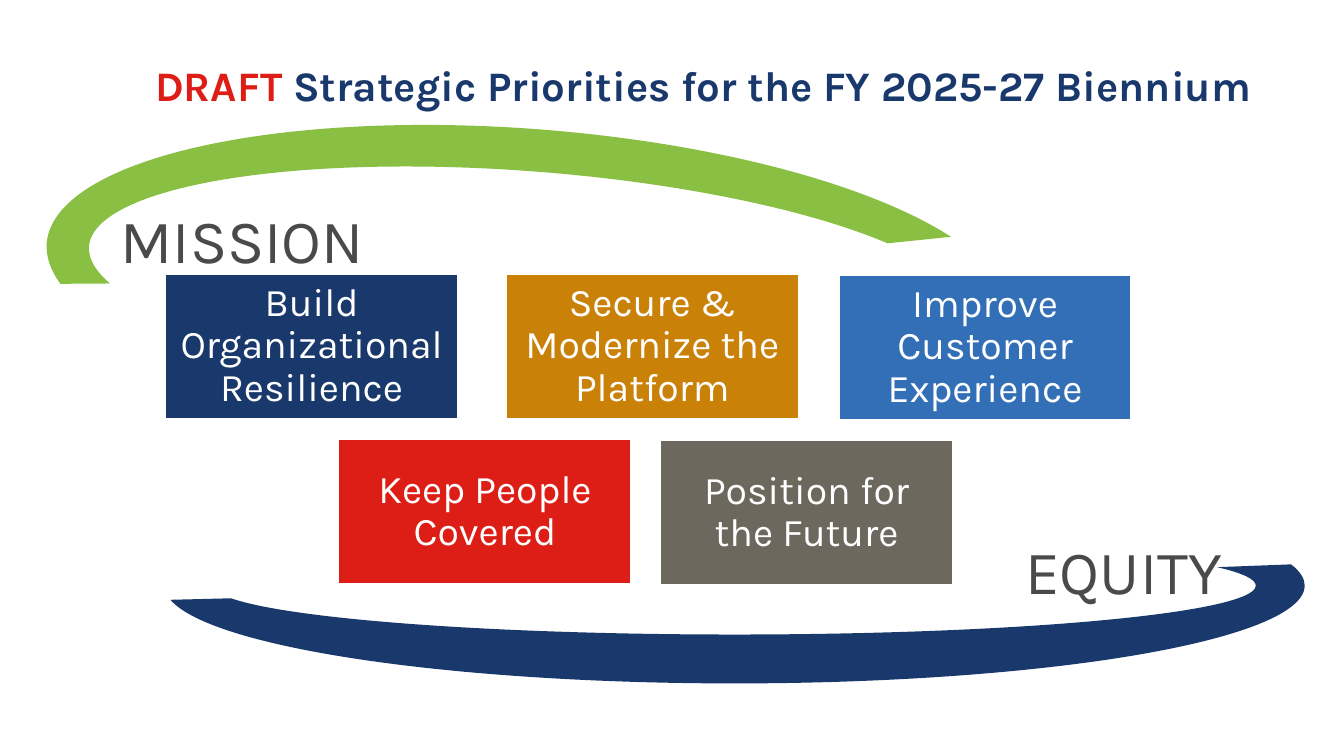
from pptx import Presentation
from pptx.dml.color import RGBColor
from pptx.enum.shapes import MSO_SHAPE
from pptx.enum.text import MSO_ANCHOR, PP_ALIGN
from pptx.util import Inches, Pt

NAVY, RED, GREEN = "19386B", "DD1E16", "89BF42"
GOLD, BLUE, TAUPE = "CA8108", "326FB6", "6D685E"
WHITE, GRAY = "FFFFFF", "4A4A4A"


def color(value):
    return RGBColor.from_string(value)


class SlideBuilder:
    font_name = "Karla"
    card_size = (2.9, 1.43)
    card_inset = Inches(0.12)

    def __init__(self, slide):
        self.slide = slide

    def style_run(self, run, size, font_color, bold=False):
        run.font.name = self.font_name
        run.font.size = Pt(size)
        run.font.bold = bold
        run.font.color.rgb = color(font_color)

    def shape(self, kind, box, fill):
        shape = self.slide.shapes.add_shape(kind, *map(Inches, box))
        shape.shadow.inherit = False
        shape.fill.solid()
        shape.fill.fore_color.rgb = color(fill)
        return shape

    def text_box(self, box):
        text_frame = self.slide.shapes.add_textbox(*map(Inches, box)).text_frame
        text_frame.word_wrap = True
        return text_frame

    def title(self, box, parts):
        text_frame = self.text_box(box)
        text_frame.vertical_anchor = MSO_ANCHOR.MIDDLE
        paragraph = text_frame.paragraphs[0]
        paragraph.line_spacing = 0.9
        for text, font_color in parts:
            run = paragraph.add_run()
            run.text = text
            self.style_run(run, 30, font_color, bold=True)

    def label(self, box, text, alignment):
        text_frame = self.text_box(box)
        text_frame.text = text
        paragraph = text_frame.paragraphs[0]
        paragraph.alignment = alignment
        self.style_run(paragraph.runs[0], 44, GRAY)

    def card(self, left, top, text, fill):
        card = self.shape(MSO_SHAPE.RECTANGLE, (left, top, *self.card_size), fill)
        card.line.color.rgb = color(WHITE)
        card.line.width = Pt(1)
        text_frame = card.text_frame
        text_frame.word_wrap = True
        text_frame.vertical_anchor = MSO_ANCHOR.MIDDLE
        text_frame.margin_left = text_frame.margin_right = self.card_inset
        text_frame.margin_top = text_frame.margin_bottom = self.card_inset
        text_frame.text = text
        paragraph = text_frame.paragraphs[0]
        paragraph.alignment = PP_ALIGN.CENTER
        paragraph.line_spacing = 0.9
        self.style_run(paragraph.runs[0], 28, WHITE)

    def swoosh(self, box, rotation, start, end, thickness, fill):
        """Draw a block arc between two angles given in degrees."""
        arc = self.shape(MSO_SHAPE.BLOCK_ARC, box, fill)
        arc.line.fill.background()
        arc.rotation = rotation
        # Angles are stored in 60000ths of a degree, adjustments in 100000ths
        arc.adjustments[0] = start * 0.6
        arc.adjustments[1] = end * 0.6
        arc.adjustments[2] = thickness


def main():
    presentation = Presentation()
    presentation.slide_width = Inches(13.33)
    presentation.slide_height = Inches(7.5)
    slide = presentation.slides.add_slide(presentation.slide_layouts[6])
    builder = SlideBuilder(slide)

    # Title
    builder.title((1.44, 0.44, 11.5, 0.86), [
        ("DRAFT", RED),
        (" Strategic Priorities for the FY 2025-27 Biennium", NAVY),
    ])

    # Priority cards
    for left, top, text, fill in [
        (1.64, 2.72, "Build Organizational Resilience", NAVY),
        (5.02, 2.72, "Secure & Modernize the Platform", GOLD),
        (8.32, 2.73, "Improve Customer Experience", BLUE),
        (3.36, 4.36, "Keep People Covered", RED),
        (6.55, 4.37, "Position for the Future", TAUPE),
    ]:
        builder.card(left, top, text, fill)

    # Arcs embracing the cards
    builder.swoosh((0.45, 1.28, 9.58, 3), 4.4, 175.15, 349.74, 0.14, GREEN)
    builder.swoosh((1.63, 4.84, 11.31, 1.94), 180, 177.81, 358.56, 0.25, NAVY)

    # Arc labels
    builder.label((1.1, 1.95, 4.16, 1.14), "MISSION", PP_ALIGN.LEFT)
    builder.label((8.06, 5.24, 4.16, 1.14), "EQUITY", PP_ALIGN.RIGHT)

    presentation.save("out.pptx")


if __name__ == "__main__":
    main()
